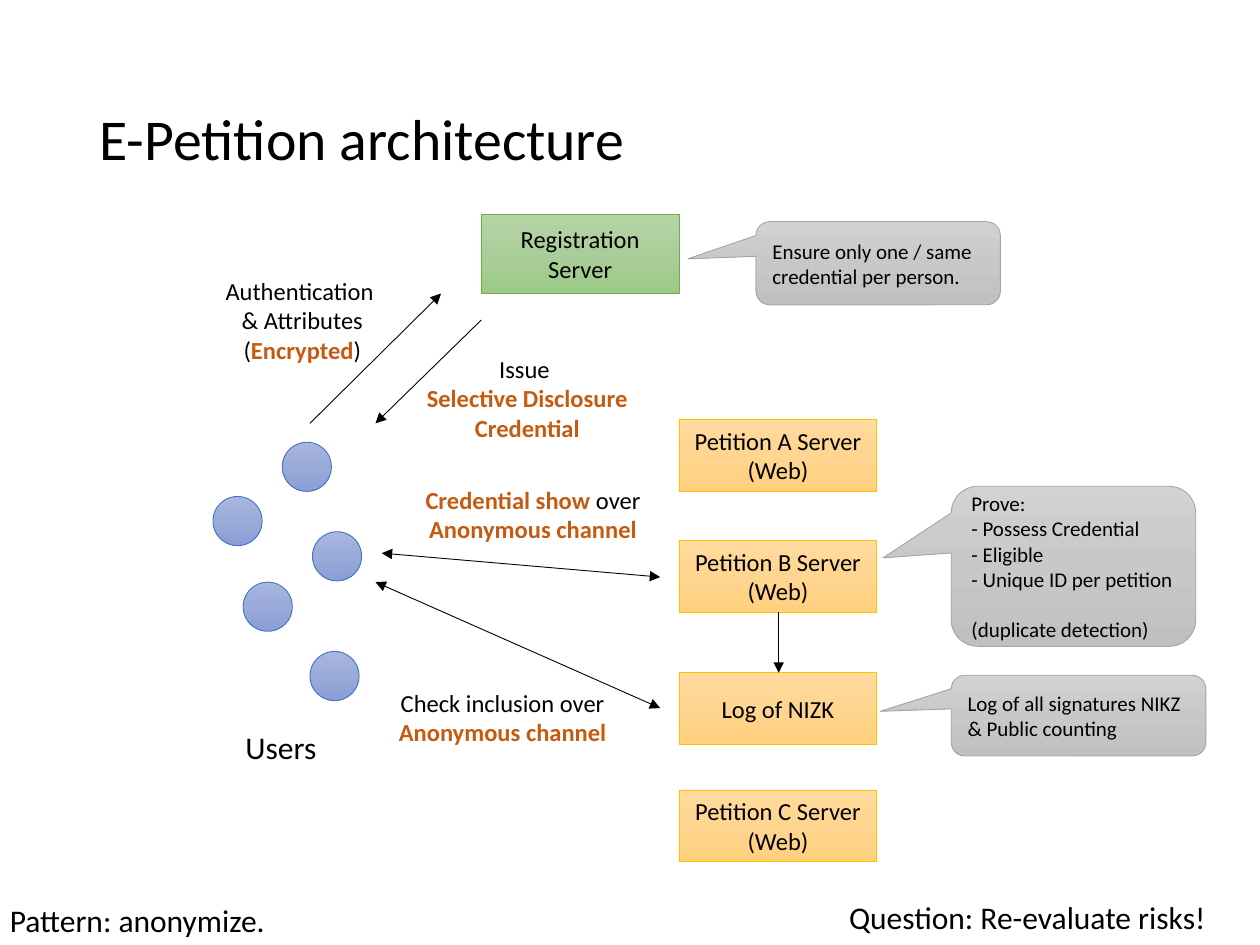
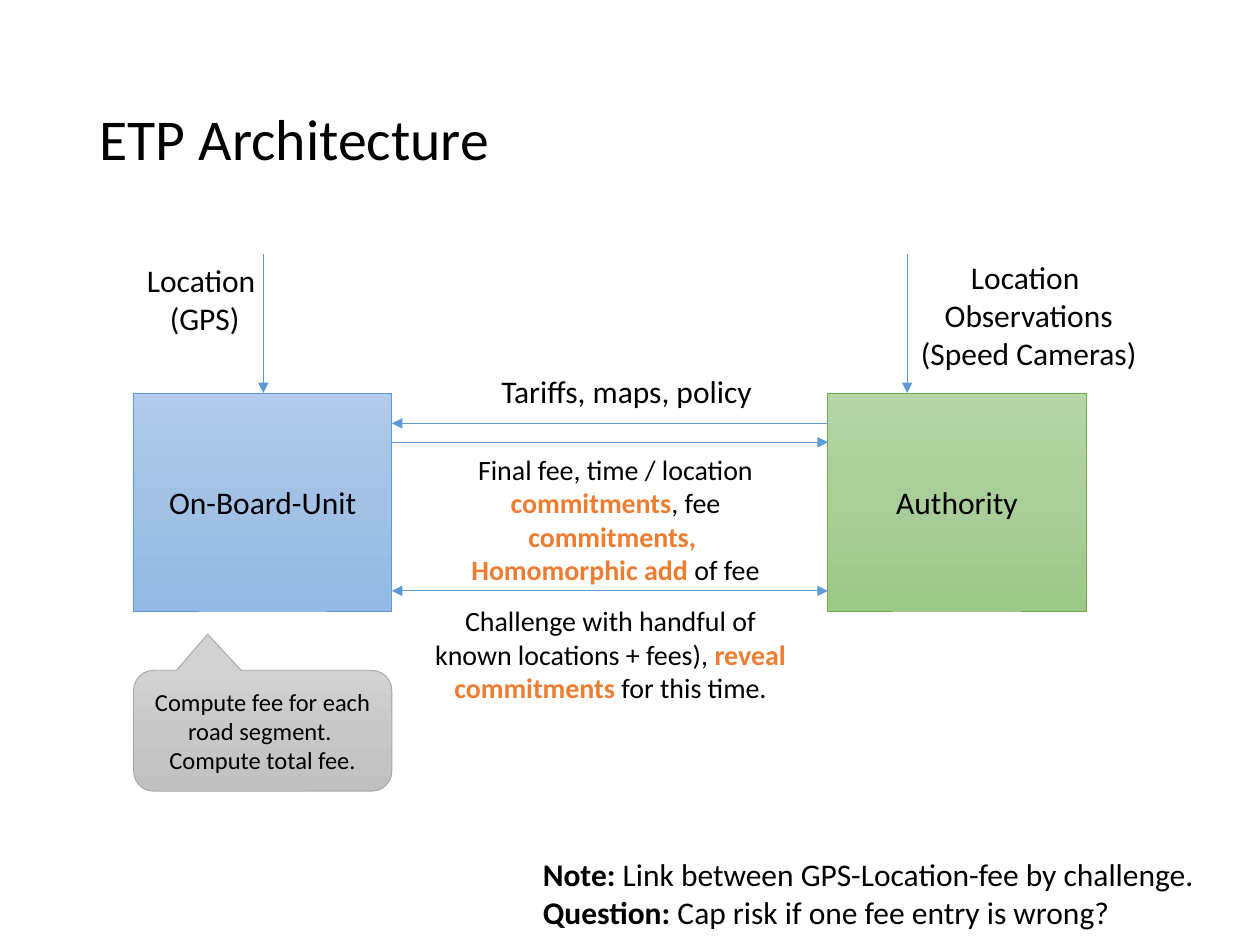
from copy import deepcopy

from lxml.etree import SubElement
from pptx import Presentation
from pptx.dml.color import RGBColor
from pptx.enum.shapes import MSO_CONNECTOR as Connector, MSO_SHAPE as Shape
from pptx.enum.text import MSO_ANCHOR as Anchor, MSO_AUTO_SIZE as AutoSize, PP_ALIGN as Align
from pptx.oxml.ns import qn
from pptx.util import Inches, Pt

FONT = "Calibri"
BLACK = "000000"
RUST = "C55A11"
ORANGE = "ED7D31"
SKY = "5B9BD5"
GREEN_STYLE = (("B5D5A7", "AACE9A", "9CC987"), "70AD47")
BLUE_STYLE = (("B1CBE9", "A3C1E5", "93B9E4"), SKY)
USER_STYLE = (("A8B7DF", "9AABD9", "889ED7"), "4472C4")
YELLOW_STYLE = (("FFDB9E", "FFD590", "FFD07C"), "FFC000")
GREY_STYLE = (("D2D2D2", "C8C8C8", "C0C0C0"), "A5A5A5")
LINE_WIDTH = Pt(0.5)


def color(value):
    return RGBColor.from_string(value)


def write(frame, text, size=18, align=Align.LEFT, accent=BLACK, spacing=None):
    """Paragraphs end at \\n, lines at \\v; words between asterisks are bold in the accent colour."""
    for number, content in enumerate(text.split("\n")):
        paragraph = frame.paragraphs[0] if number == 0 else frame.add_paragraph()
        paragraph.alignment = align
        paragraph.line_spacing = spacing
        for index, segment in enumerate(content.split("*")):
            emphasized = index % 2 == 1
            for line_number, words in enumerate(segment.split("\v")):
                if line_number:
                    paragraph.add_line_break()
                if words:
                    run = paragraph.add_run()
                    run.text = words
                    run.font.name = FONT
                    run.font.size = Pt(size)
                    run.font.bold = emphasized
                    run.font.color.rgb = color(accent if emphasized else BLACK)
        for line_break in paragraph._p.findall(qn("a:br")):
            SubElement(line_break, qn("a:rPr")).set("sz", str(size * 100))


def add_titled_slide(presentation, text):
    slide = presentation.slides.add_slide(presentation.slide_layouts[5])
    title = slide.shapes.title
    title.left, title.top = Inches(0.69), Inches(0.4)
    title.width, title.height = Inches(8.62), Inches(1.45)
    title.text_frame.vertical_anchor = Anchor.MIDDLE
    write(title.text_frame, text, size=33, spacing=0.9)
    return slide


def fill_gradient(shape, colors):
    shape.fill.gradient()
    shape.fill.gradient_angle = 270
    stop_list = shape._element.spPr.find(qn("a:gradFill")).find(qn("a:gsLst"))
    stop_list.insert(1, deepcopy(stop_list[0]))
    for stop, position, value in zip(shape.fill.gradient_stops, (0, 0.5, 1), colors):
        stop.position = position
        stop.color.rgb = color(value)


def add_filled(slide, kind, left, top, width, height, style, text="", **text_format):
    shape = slide.shapes.add_shape(kind, Inches(left), Inches(top), Inches(width), Inches(height))
    colors, outline = style
    shape.shadow.inherit = False
    fill_gradient(shape, colors)
    shape.line.color.rgb = color(outline)
    shape.line.width = LINE_WIDTH
    if text:
        shape.text_frame.word_wrap = True
        shape.text_frame.vertical_anchor = Anchor.MIDDLE
        write(shape.text_frame, text, **text_format)
    return shape


def add_box(slide, left, top, width, height, style, text, size):
    add_filled(slide, Shape.RECTANGLE, left, top, width, height, style, text,
               size=size, align=Align.CENTER)


def add_callout(slide, left, top, width, height, text, pointer=(-0.779, -0.053), **text_format):
    callout = add_filled(slide, Shape.ROUNDED_RECTANGULAR_CALLOUT, left, top, width, height,
                         GREY_STYLE, text, **text_format)
    callout.adjustments[0], callout.adjustments[1] = pointer


def add_label(slide, left, top, width, height, text, wrap=False, **text_format):
    box = slide.shapes.add_textbox(Inches(left), Inches(top), Inches(width), Inches(height))
    box.text_frame.word_wrap = wrap
    box.text_frame.auto_size = AutoSize.SHAPE_TO_FIT_TEXT
    write(box.text_frame, text, **text_format)


def add_arrow(slide, start, end, line_color, both=False):
    arrow = slide.shapes.add_connector(Connector.STRAIGHT, *map(Inches, start + end))
    arrow.line.color.rgb = color(line_color)
    arrow.line.width = LINE_WIDTH
    properties = arrow._element.spPr
    line = properties.find(qn("a:ln"))
    for tag in ("a:headEnd", "a:tailEnd") if both else ("a:tailEnd",):
        SubElement(line, qn(tag)).set("type", "triangle")
    SubElement(properties, qn("a:effectLst"))


def build_petition_slide(presentation):
    slide = add_titled_slide(presentation, "E-Petition architecture")
    add_box(slide, 3.82, 1.7, 1.57, 0.63, GREEN_STYLE, "Registration Server", 14)
    for left, top in ((2.24, 3.51), (2.48, 4.22), (1.69, 3.94), (1.93, 4.62), (2.46, 5.17)):
        add_filled(slide, Shape.OVAL, left, top, 0.39, 0.39, USER_STYLE)
    servers = ((3.33, "Petition A Server (Web)"), (4.29, "Petition B Server (Web)"),
               (5.34, "Log of NIZK"), (6.27, "Petition C Server (Web)"))
    for top, text in servers:
        add_box(slide, 5.39, top, 1.57, 0.57, YELLOW_STYLE, text, 14)

    arrows = (((2.46, 3.36), (3.5, 2.33), False), ((3.82, 2.54), (2.98, 3.36), False),
              ((3.03, 4.39), (5.24, 4.58), True), ((6.18, 4.86), (6.18, 5.34), False),
              ((2.98, 4.62), (5.24, 5.62), True))
    for start, end, both in arrows:
        add_arrow(slide, start, end, BLACK, both)

    messages = (
        (1.68, 2.14, 1.44, 0.81, "Authentication \n& Attributes\n(*Encrypted*)"),
        (3.28, 2.76, 1.81, 0.81, "Issue \v*Selective Disclosure*\n*Credential*"),
        (3.27, 3.8, 1.92, 0.57, "*Credential show *over\n*Anonymous channel*"),
        (3.06, 5.41, 1.86, 0.57, "Check inclusion over\n*Anonymous channel*"),
    )
    for message in messages:
        add_label(slide, *message, size=14, align=Align.CENTER, accent=RUST)

    callouts = (
        (6, 1.76, 1.94, 0.66, "Ensure only one / same credential per person."),
        (7.55, 3.86, 1.94, 1.27, "Prove:\v- Possess Credential\n- Eligible\n"
                                 "- Unique ID per petition \v(duplicate detection)"),
        (7.55, 5.36, 2.02, 0.64, "Log of all signatures NIKZ\v& Public counting"),
    )
    for callout in callouts:
        add_callout(slide, *callout, size=12)

    add_label(slide, 1.85, 5.73, 0.77, 0.4, "Users")
    add_label(slide, 6.64, 7.08, 3.06, 0.4, "Question: Re-evaluate risks!")
    add_label(slide, -0.02, 7.1, 2.25, 0.4, "Pattern: anonymize.")


def build_toll_slide(presentation):
    slide = add_titled_slide(presentation, "ETP Architecture")
    unit_left, authority_left, top, width, height = 1.06, 6.57, 3.12, 2.05, 1.73
    unit_right = unit_left + width
    add_box(slide, unit_left, top, width, height, BLUE_STYLE, "On-Board-Unit", 18)
    add_box(slide, authority_left, top, width, height, GREEN_STYLE, "Authority", 18)
    add_callout(slide, unit_left, 5.32, width, 0.96,
                "Compute fee for each road segment. \vCompute total fee.",
                pointer=(-0.213, -0.799), size=14, align=Align.CENTER)

    for x in (2.09, 7.2):
        add_arrow(slide, (x, 2.02), (x, top), SKY)
    add_arrow(slide, (authority_left, 3.36), (unit_right, 3.36), SKY)
    add_arrow(slide, (unit_right, 3.51), (authority_left, 3.51), SKY)
    add_arrow(slide, (unit_right, 4.69), (authority_left, 4.69), SKY, both=True)

    add_label(slide, 1.06, 2.02, 1.13, 0.71, "Location \n(GPS)", align=Align.CENTER)
    add_label(slide, 7.2, 2, 1.93, 1.01, "Location \nObservations\n(Speed Cameras)",
              align=Align.CENTER)
    add_label(slide, 3.88, 2.9, 2.22, 0.4, "Tariffs, maps, policy")
    exchanges = (
        (3.27, 3.54, 3.23, 1.18, "Final fee, time / location *commitments*, fee "
                                 "*commitments, \vHomomorphic add* of fee"),
        (3.27, 4.74, 3.15, 0.91, "Challenge with handful of known locations + fees), "
                                 "*reveal commitments* for this time."),
    )
    for exchange in exchanges:
        add_label(slide, *exchange, wrap=True, size=16, align=Align.CENTER, accent=ORANGE)
    add_label(slide, 4.21, 6.74, 5.69, 0.71,
              "*Note: *Link between GPS-Location-fee by challenge."
              "* Question:* Cap risk if one fee entry is wrong?", wrap=True)


def main():
    presentation = Presentation()
    presentation.slide_width, presentation.slide_height = Inches(10), Inches(7.5)
    build_petition_slide(presentation)
    build_toll_slide(presentation)
    presentation.save("out.pptx")


if __name__ == "__main__":
    main()
